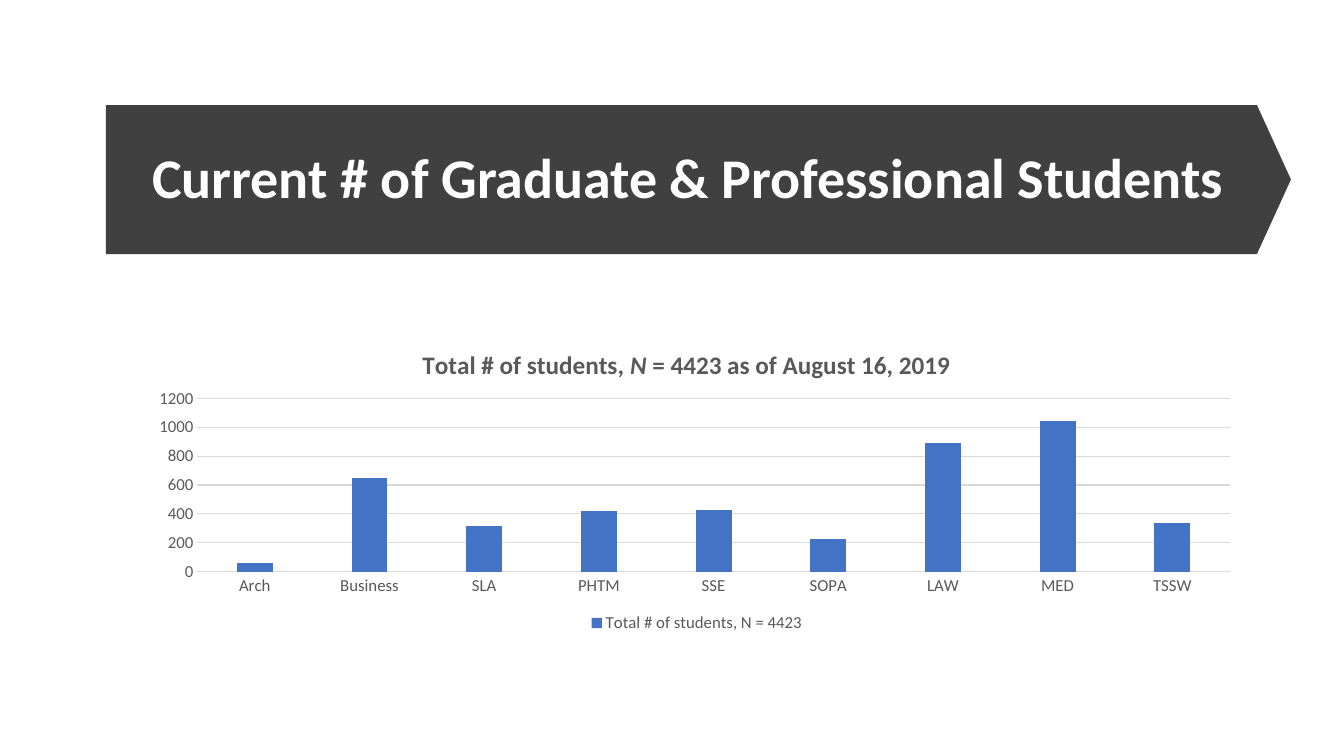
from dataclasses import dataclass

from lxml.etree import SubElement
from pptx import Presentation
from pptx.chart.data import CategoryChartData
from pptx.dml.color import RGBColor
from pptx.enum.chart import XL_CHART_TYPE as ChartType
from pptx.enum.chart import XL_LEGEND_POSITION as LegendPosition
from pptx.enum.chart import XL_TICK_MARK as TickMark
from pptx.enum.shapes import MSO_SHAPE as Preset
from pptx.enum.text import MSO_ANCHOR as Anchor
from pptx.enum.text import MSO_AUTO_SIZE as AutoSize
from pptx.enum.text import PP_ALIGN as Align
from pptx.oxml.ns import qn
from pptx.util import Pt

EMU_PER_PX = 914400 / 100.8
TITLE_ONLY = 5


@dataclass(frozen=True)
class Theme:
    """Font, colours and type sizes of the slide."""
    font: str = "Calibri"
    banner: str = "404040"
    heading: str = "FFFFFF"
    label: str = "595959"
    rule: str = "D9D9D9"
    column: str = "4472C4"
    heading_size: int = 40
    chart_title_size: int = 18
    label_size: int = 12
    rule_width: float = 0.75


THEME = Theme()

STUDENTS = {
    "Arch": 60, "Business": 650, "SLA": 320, "PHTM": 420, "SSE": 430,
    "SOPA": 230, "LAW": 890, "MED": 1040, "TSSW": 340,
}


def px(*lengths):
    """Turn pixel lengths into EMU."""
    return [round(length * EMU_PER_PX) for length in lengths]


def style_font(font, size, color, bold=False, italic=False):
    """Apply the theme font with a size, colour and style."""
    font.name = THEME.font
    font.size = Pt(size)
    font.bold = bold
    font.italic = italic
    font.color.rgb = RGBColor.from_string(color)


def style_line(line):
    """Draw a line as a thin grey rule."""
    line.color.rgb = RGBColor.from_string(THEME.rule)
    line.width = Pt(THEME.rule_width)


def set_heading(slide, text, box):
    """Place the slide title and fill it with one run."""
    heading = slide.shapes.title
    heading.left, heading.top, heading.width, heading.height = px(*box)
    frame = heading.text_frame
    frame.word_wrap = True
    frame.auto_size = AutoSize.NONE
    frame.vertical_anchor = Anchor.MIDDLE
    paragraph = frame.paragraphs[0]
    paragraph.alignment = Align.LEFT
    paragraph.line_spacing = 0.9
    run = paragraph.add_run()
    run.text = text
    style_font(run.font, THEME.heading_size, THEME.heading, bold=True)


def add_banner(slide, box, tip):
    """Add the pointed banner behind the title."""
    banner = slide.shapes.add_shape(Preset.PENTAGON, *px(*box))
    banner.adjustments[0] = tip / box[3]
    banner.shadow.inherit = False
    banner.fill.solid()
    banner.fill.fore_color.rgb = RGBColor.from_string(THEME.banner)
    banner.line.fill.background()
    slide.shapes.title.element.addprevious(banner.element)


def set_layout(part, inner=False, **fractions):
    """Fix a chart part at fractions of the chart area."""
    layout = part.find(qn("c:layout"))
    if layout is None:
        layout = part.makeelement(qn("c:layout"))
        text = part.find(qn("c:tx"))
        if text is None:
            part.insert(0, layout)
        else:
            text.addnext(layout)
    manual = SubElement(layout, qn("c:manualLayout"))
    if inner:
        SubElement(manual, qn("c:layoutTarget")).set("val", "inner")
    for side in ("x", "y"):
        SubElement(manual, qn(f"c:{side}Mode")).set("val", "edge")
    for side, fraction in fractions.items():
        SubElement(manual, qn(f"c:{side}")).set("val", str(fraction))


def set_chart_title(chart, pieces):
    """Write the chart title from (text, italic) pieces."""
    paragraph = chart.chart_title.text_frame.paragraphs[0]
    for text, italic in pieces:
        run = paragraph.add_run()
        run.text = text
        style_font(run.font, THEME.chart_title_size, THEME.label, True, italic)
    chart.chart_title.include_in_layout = False
    set_layout(chart.chart_title.element if hasattr(chart.chart_title, "element")
               else chart.element.find(".//" + qn("c:title")), x=0.25, y=0.06)


def style_axes(chart):
    """Format both axes and the value gridlines."""
    for axis in (chart.category_axis, chart.value_axis):
        axis.major_tick_mark = axis.minor_tick_mark = TickMark.NONE
        style_font(axis.tick_labels.font, THEME.label_size, THEME.label)
    style_line(chart.category_axis.format.line)
    counts = chart.value_axis
    counts.minimum_scale, counts.maximum_scale = 0, 1200
    counts.major_unit = 200
    counts.format.line.fill.background()
    style_line(counts.major_gridlines.format.line)


def add_student_chart(slide, series_name, box):
    """Add the column chart of students by school and return it."""
    enrolment = CategoryChartData()
    enrolment.categories = list(STUDENTS)
    enrolment.add_series(series_name, list(STUDENTS.values()))
    chart = slide.shapes.add_chart(
        ChartType.COLUMN_CLUSTERED, *px(*box), enrolment).chart
    style_font(chart.font, THEME.label_size, THEME.label)
    style_axes(chart)

    plot = chart.plots[0]
    plot.gap_width, plot.overlap = 219, -27
    plot.vary_by_categories = False
    columns = plot.series[0].format.fill
    columns.solid()
    columns.fore_color.rgb = RGBColor.from_string(THEME.column)
    set_layout(chart.element.find(".//" + qn("c:plotArea")), inner=True,
               x=0.05, y=0.23, w=0.93, h=0.56)

    chart.has_legend = True
    chart.legend.position = LegendPosition.BOTTOM
    chart.legend.include_in_layout = False
    style_font(chart.legend.font, THEME.label_size, THEME.label)
    return chart


def main():
    """Build the slide and save it."""
    deck = Presentation()
    deck.slide_width, deck.slide_height = px(1344, 756)
    slide = deck.slides.add_slide(deck.slide_layouts[TITLE_ONLY])
    set_heading(slide, "Current # of Graduate & Professional Students",
                (142, 133, 1105, 95))
    add_banner(slide, (106, 105, 1185, 149), tip=34)
    chart = add_student_chart(slide, "Total # of students, N = 4423",
                              (142, 327, 1110, 310))
    set_chart_title(chart, [("Total # of students, ", False), ("N", True),
                            (" = 4423 as of August 16, 2019", False)])
    deck.save("out.pptx")


if __name__ == "__main__":
    main()
